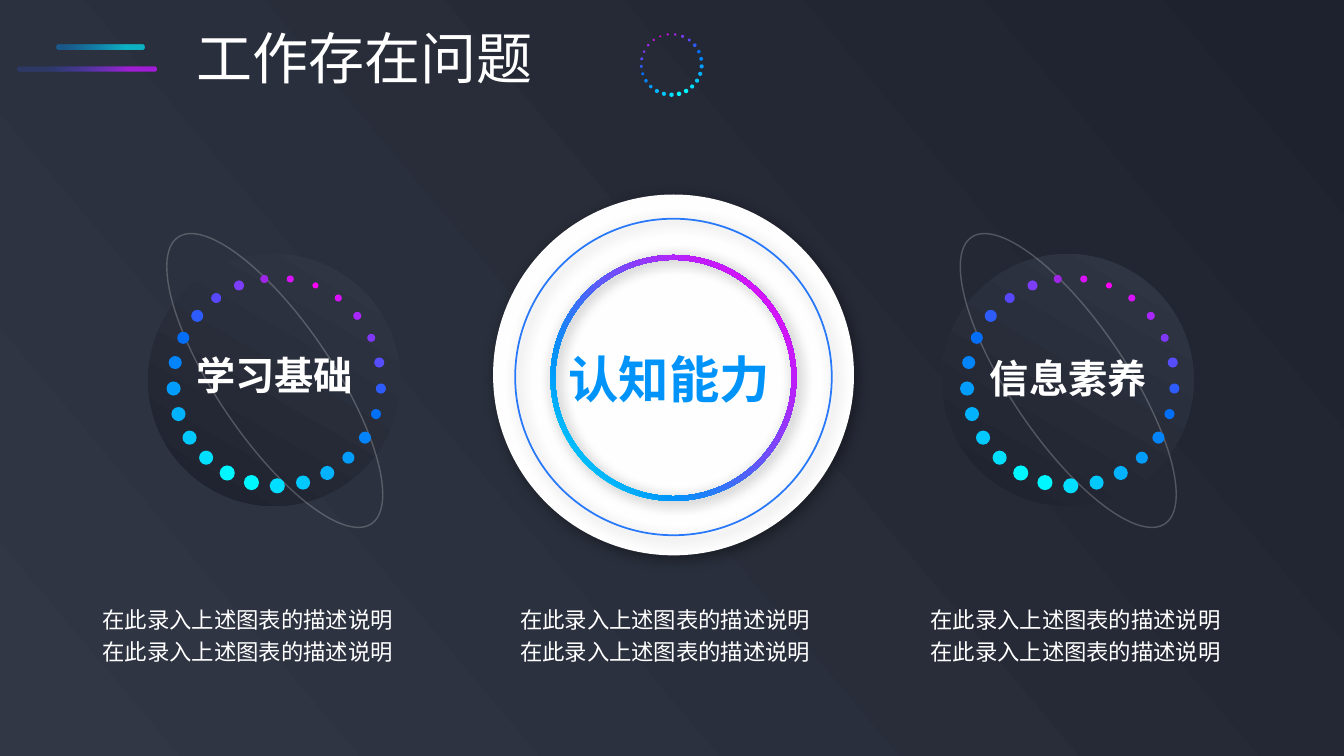
import math
from pptx import Presentation
from pptx.dml.color import RGBColor
from pptx.enum import shapes, text
from pptx.oxml import parse_xml
from pptx.oxml.ns import nsdecls, qn
from pptx.util import Inches, Pt

COLORS = {
    "white": "FFFFFF", "disc": "FEFEFE", "night": "1E222E", "slate": "313745",
    "cyan": "00ECFE", "blue": "0094FA", "purple": "BE1DFB", "pink": "FC02F9",
    "indigo": "3558FB", "outline": "2878FA", "shadow": "000000",
}
DARK = [(0, "slate", 100), (100, "night", 100)]
NEON = [(0, "cyan", 100), (27, "blue", 100), (76, "purple", 100), (100, "pink", 100)]
DOTS = [
    ("01DEFF", 0.15), ("00F7FF", 0.15), ("00F7FF", 0.15), ("00DFFE", 0.14),
    ("01C9FD", 0.14), ("02B2FD", 0.14), ("029CFD", 0.14), ("0285FB", 0.13),
    ("036EFA", 0.12), ("2D5CFA", 0.12), ("5748FD", 0.1), ("7D3EFC", 0.1),
    ("9F26E7", 0.08), ("D813FB", 0.07), ("FC02F9", 0.06), ("D912FC", 0.07),
    ("AA27FB", 0.08), ("7F39F6", 0.08), ("564EFC", 0.1), ("2E5CFB", 0.1),
    ("026FF9", 0.1), ("0384FB", 0.12), ("029CFB", 0.12), ("02B2FD", 0.14),
    ("01C9FD", 0.14),
]
RING_RADIUS = 1.03
DESCRIPTION = "在此录入上述图表的描述说明" * 2


class SlideBuilder:
    font = "Noto Sans CJK SC"

    def __init__(self, deck):
        self.page = deck.slides.add_slide(deck.slide_layouts[5])

    def gradient(self, properties, stops, angle):
        marks = "".join(
            f'<a:gs pos="{spot * 1000}"><a:srgbClr val="{COLORS[name]}">'
            f'<a:alpha val="{alpha * 1000}"/></a:srgbClr></a:gs>'
            for spot, name, alpha in stops)
        fill = parse_xml(
            f'<a:gradFill {nsdecls("a")} rotWithShape="1"><a:gsLst>{marks}</a:gsLst>'
            f'<a:lin ang="{angle * 60000}" scaled="0"/></a:gradFill>')
        properties.replace(properties.find(qn("a:solidFill")), fill)

    def background(self, stops, angle):
        self.page.background.fill.solid()
        self.gradient(self.page._element.find(".//" + qn("p:bgPr")), stops, angle)

    def shape(self, kind, left, top, width, height, fill=None, parent=None):
        shape = (parent or self.page).shapes.add_shape(
            kind, Inches(left), Inches(top), Inches(width), Inches(height))
        shape.shadow.inherit = False
        shape.line.fill.background()
        if fill:
            shape.fill.solid()
            shape.fill.fore_color.rgb = RGBColor.from_string(fill)
        else:
            shape.fill.background()
        return shape

    def circle(self, x, y, size, fill=None, parent=None, kind=shapes.MSO_SHAPE.OVAL):
        return self.shape(kind, x - size / 2, y - size / 2, size, size, fill, parent)

    def outline(self, shape, color, width, alpha=100):
        shape.line.color.rgb = RGBColor.from_string(color)
        shape.line.width = Pt(width)
        tint = shape._element.spPr.find(qn("a:ln")).find(".//" + qn("a:srgbClr"))
        tint.append(parse_xml(f'<a:alpha {nsdecls("a")} val="{alpha * 1000}"/>'))

    def shadow(self, shape):
        effects = shape._element.spPr.find(qn("a:effectLst"))
        effects.append(parse_xml(
            f'<a:outerShdw {nsdecls("a")} blurRad="{Pt(10)}" dist="{Pt(3)}" dir="2700000" '
            f'algn="tl" rotWithShape="0"><a:srgbClr val="{COLORS["shadow"]}">'
            '<a:alpha val="40000"/></a:srgbClr></a:outerShdw>'))

    def bar(self, left, top, width, stops):
        bar = self.shape(shapes.MSO_SHAPE.ROUNDED_RECTANGLE, left, top, width, 0.05,
                         COLORS["blue"])
        bar.adjustments[0] = 0.42
        self.gradient(bar._element.spPr, stops, 0)

    def dot_ring(self, x, y, radius, direction):
        group = self.page.shapes.add_group_shape()
        for index, (color, size) in enumerate(DOTS):
            angle = 2 * math.pi * index / len(DOTS)
            self.circle(x + direction * radius * math.sin(angle),
                        y + radius * math.cos(angle),
                        size * radius / RING_RADIUS, color, group)

    def planet(self, x):
        globe = self.circle(x, 3.77, 2.5, COLORS["slate"])
        self.gradient(globe._element.spPr, DARK, 120)
        orbit = self.shape(shapes.MSO_SHAPE.OVAL, x - 0.57, 2.06, 1.15, 3.43)
        orbit.rotation = 326
        self.outline(orbit, COLORS["white"], 1, 22)
        self.dot_ring(x + 0.03, 3.79, RING_RADIUS, -1)

    def hub(self, x):
        disc = self.circle(x, 3.72, 3.58, COLORS["disc"])
        ring = self.circle(x, 3.75, 2.44, COLORS["blue"], kind=shapes.MSO_SHAPE.DONUT)
        ring.adjustments[0] = 0.02
        self.gradient(ring._element.spPr, NEON, 320)
        circle = self.circle(x, 3.74, 3.14)
        self.outline(circle, COLORS["outline"], 1.25)
        for part in (disc, ring, circle):
            self.shadow(part)

    def letter(self, box, words, size, color="white", bold=False, wrap=False, spacing=1):
        frame = box.text_frame
        frame.text = words
        frame.word_wrap = wrap
        frame.auto_size = text.MSO_AUTO_SIZE.NONE
        frame.vertical_anchor = text.MSO_ANCHOR.TOP
        para = frame.paragraphs[0]
        para.alignment = text.PP_ALIGN.LEFT
        para.line_spacing = spacing
        span = para.runs[0]
        span.font.size = Pt(size)
        span.font.bold = bold
        span.font.name = self.font
        span.font.color.rgb = RGBColor.from_string(COLORS[color])
        span.font._element.find(qn("a:latin")).addnext(
            parse_xml(f'<a:ea {nsdecls("a")} typeface="{self.font}"/>'))

    def title(self, words, left, top, width, height):
        box = self.page.shapes.title
        box.left, box.top = Inches(left), Inches(top)
        box.width, box.height = Inches(width), Inches(height)
        self.letter(box, words, 40)

    def textbox(self, words, left, top, width, height, size, **style):
        box = self.page.shapes.add_textbox(
            Inches(left), Inches(top), Inches(width), Inches(height))
        self.letter(box, words, size, **style)


def main():
    deck = Presentation()
    deck.slide_width, deck.slide_height = Inches(13.33), Inches(7.5)
    slide = SlideBuilder(deck)
    slide.background(DARK, 320)
    slide.dot_ring(6.66, 0.64, 0.3, 1)
    slide.bar(0.17, 0.66, 1.38, [(21, "indigo", 20), (80, "purple", 80)])
    slide.bar(0.56, 0.44, 0.87, [(10, "blue", 40), (79, "cyan", 70)])
    slide.title("工作存在问题", 1.85, 0.18, 3.57, 0.77)
    slide.planet(2.72)
    slide.hub(6.68)
    slide.planet(10.59)
    slide.textbox("学习基础", 1.85, 3.44, 1.78, 0.57, 28, bold=True)
    slide.textbox("认知能力", 5.54, 3.4, 2.23, 0.71, 36, color="blue", bold=True)
    slide.textbox("信息素养", 9.72, 3.47, 1.78, 0.57, 28, bold=True)
    for left in (0.92, 5.06, 9.13):
        slide.textbox(DESCRIPTION, left, 5.91, 3.23, 0.75, 16, wrap=True, spacing=1.2)
    deck.save("out.pptx")


if __name__ == "__main__":
    main()
